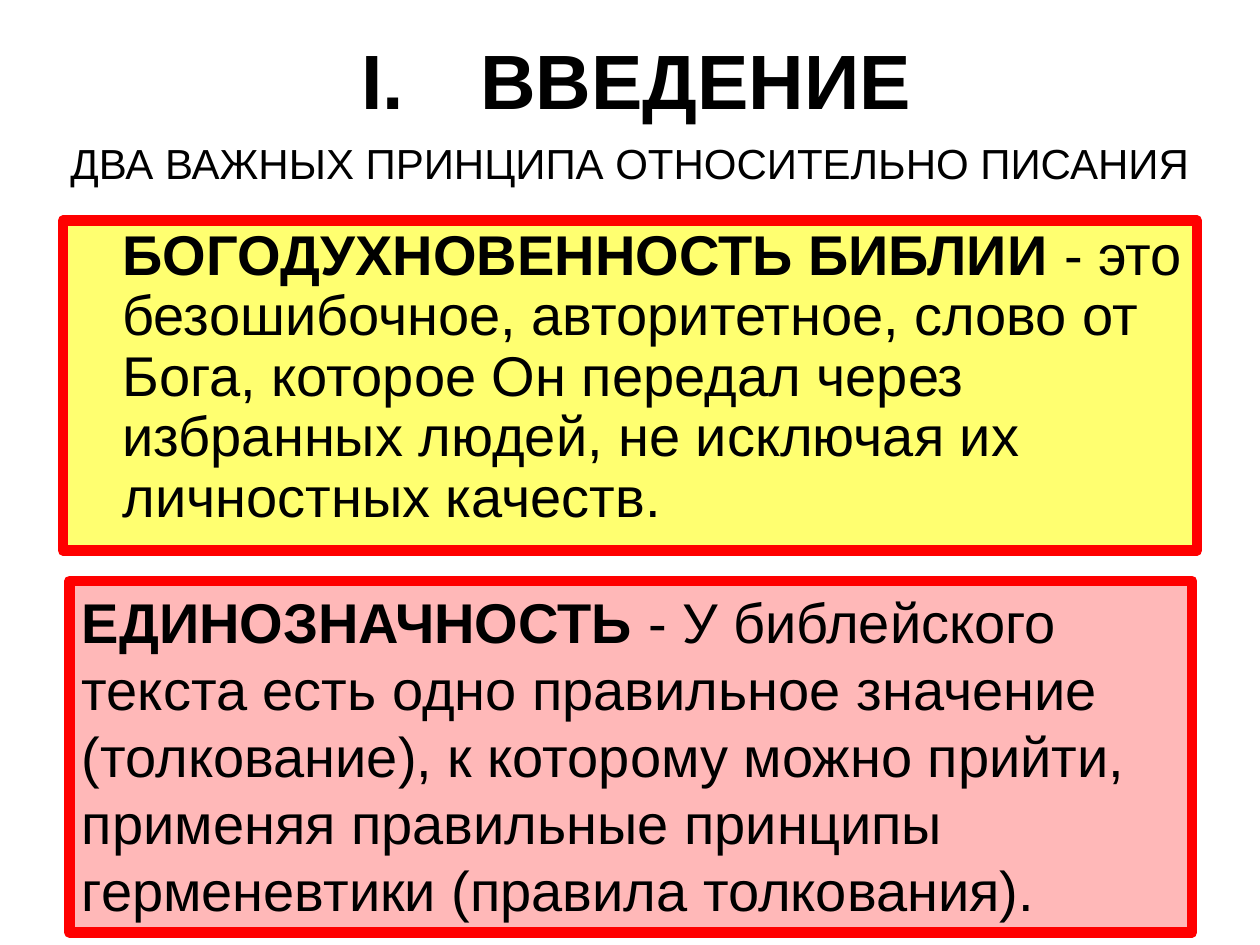
from dataclasses import dataclass, field

from lxml.etree import SubElement
from pptx import Presentation
from pptx.dml.color import RGBColor
from pptx.enum.shapes import MSO_SHAPE as Preset
from pptx.enum.text import MSO_ANCHOR as Anchor, PP_ALIGN as Align
from pptx.oxml.ns import qn
from pptx.util import Cm, Pt

BLACK, RED, YELLOW = "000000", "FF0000", "FFFF00"


@dataclass
class Block:
    """A piece of text, framed in red when it has a fill."""
    box: tuple[float, float, float, float]  # left, top, width, height in cm
    runs: list[tuple[str, bool]]  # wording, bold
    size: int
    fill: str | None = None
    opacity: int = 100  # percent
    indent: float = 0  # cm
    hanging: float = 0  # cm
    numbering: str | None = None
    frame_format: dict = field(default_factory=dict)
    paragraph_format: dict = field(default_factory=dict)


def color(code: str) -> RGBColor:
    return RGBColor.from_string(code)


def apply(target, values: dict) -> None:
    for name, value in values.items():
        setattr(target, name, value)


def paint(panel, block: Block) -> None:
    """Give a panel its see-through fill and thick red border."""
    panel.shadow.inherit = False
    panel.fill.solid()
    panel.fill.fore_color.rgb = color(block.fill)
    tint = panel.fill._xPr.find(qn("a:solidFill"))[0]
    SubElement(tint, qn("a:alpha"), val=str(block.opacity * 1000))
    panel.line.color.rgb = color(RED)
    panel.line.width = Pt(6)


def write(frame, block: Block) -> None:
    apply(frame, {"word_wrap": True, "vertical_anchor": Anchor.TOP} | block.frame_format)
    paragraph = frame.paragraphs[0]
    apply(paragraph, {"alignment": Align.LEFT} | block.paragraph_format)
    properties = paragraph._p.get_or_add_pPr()
    properties.set("marL", str(Cm(block.indent)))
    properties.set("indent", str(-Cm(block.hanging)))
    if block.numbering:
        SubElement(properties, qn("a:buFont"), typeface="Arial")
        SubElement(properties, qn("a:buAutoNum"), type=block.numbering)
    for wording, bold in block.runs:
        run = paragraph.add_run()
        run.text = wording
        apply(run.font, {"name": "Arial", "size": Pt(block.size), "bold": bold})
        run.font.color.rgb = color(BLACK)


def draw(slide, block: Block) -> None:
    place = [Cm(length) for length in block.box]
    if block.fill:
        shape = slide.shapes.add_shape(Preset.RECTANGLE, *place)
        paint(shape, block)
    else:
        shape = slide.shapes.add_textbox(*place)
    write(shape.text_frame, block)


CENTERED = {"alignment": Align.CENTER}

BLOCKS = [
    # Subtitle, raised by one line within its box
    Block((0, 2.18, 25.4, 3.18), [("ДВА ВАЖНЫХ ПРИНЦИПА ОТНОСИТЕЛЬНО ПИСАНИЯ", False)], 24,
          frame_format={"vertical_anchor": Anchor.MIDDLE, "margin_bottom": Cm(1.1)},
          paragraph_format=CENTERED),
    # First principle
    Block((1.27, 4.45, 22.86, 6.65),
          [("БОГОДУХНОВЕННОСТЬ БИБЛИИ ", True),
           ("- это безошибочное, авторитетное, слово от Бога, которое Он передал "
            "через избранных людей, не исключая их личностных качеств.", False)],
          32, YELLOW, 56, indent=0.95, paragraph_format={"line_spacing": 0.9}),
    # Second principle
    Block((1.4, 11.71, 22.63, 7.09),
          [("ЕДИНОЗНАЧНОСТЬ", True),
           (" - У библейского текста есть одно правильное значение (толкование), "
            "к которому можно прийти, применяя правильные принципы герменевтики "
            "(правила толкования).", False)],
          32, RED, 28),
    # Numbered heading
    Block((1.4, 0, 22.86, 3.18), [("ВВЕДЕНИЕ", True)], 44,
          indent=2.4, hanging=2.4, numbering="romanUcPeriod",
          frame_format={"vertical_anchor": Anchor.MIDDLE}, paragraph_format=CENTERED),
]


def main() -> None:
    deck = Presentation()
    apply(deck, {"slide_width": Cm(25.4), "slide_height": Cm(19.05)})
    slide = deck.slides.add_slide(deck.slide_layouts[6])
    for block in BLOCKS:
        draw(slide, block)
    deck.save("out.pptx")


if __name__ == "__main__":
    main()
